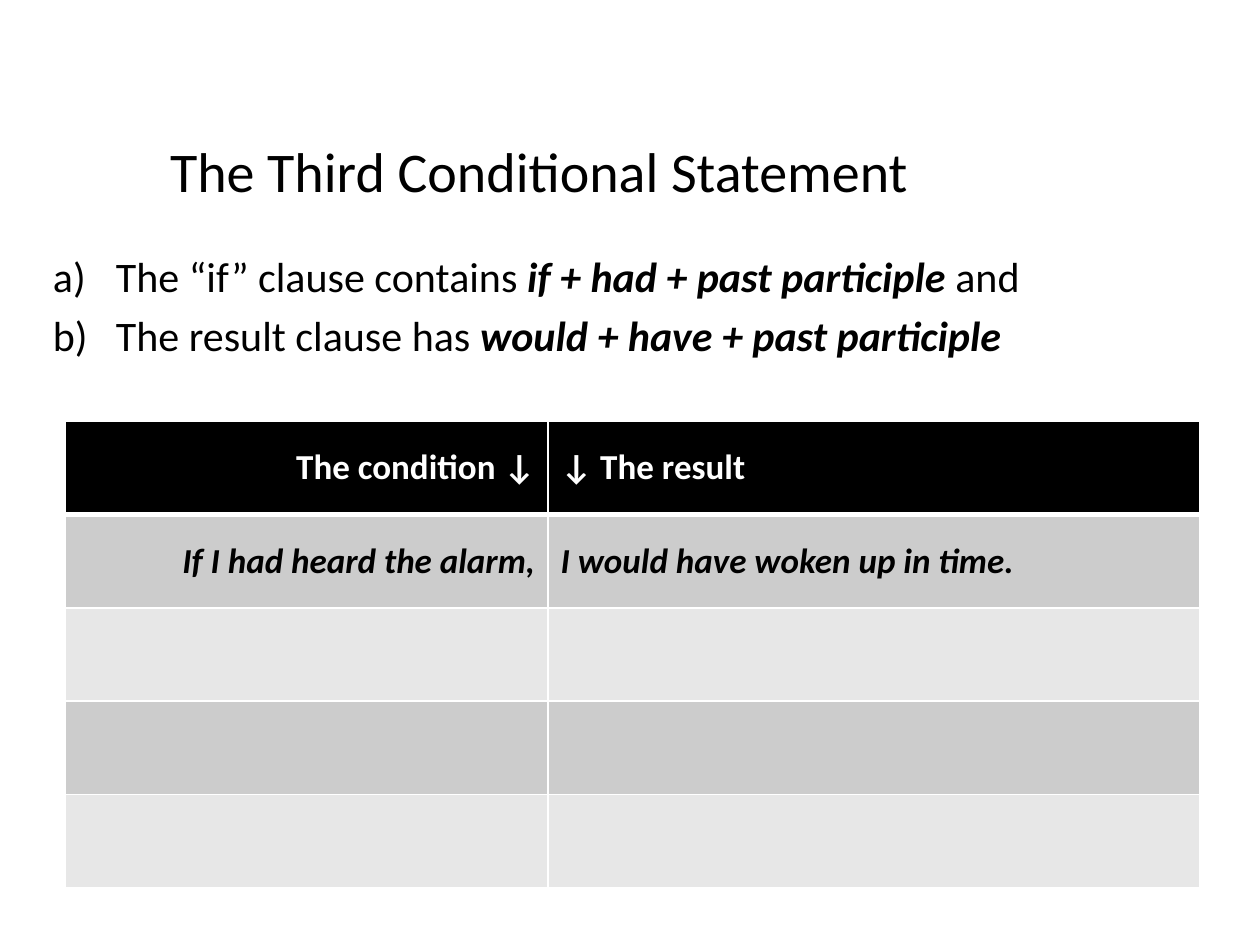
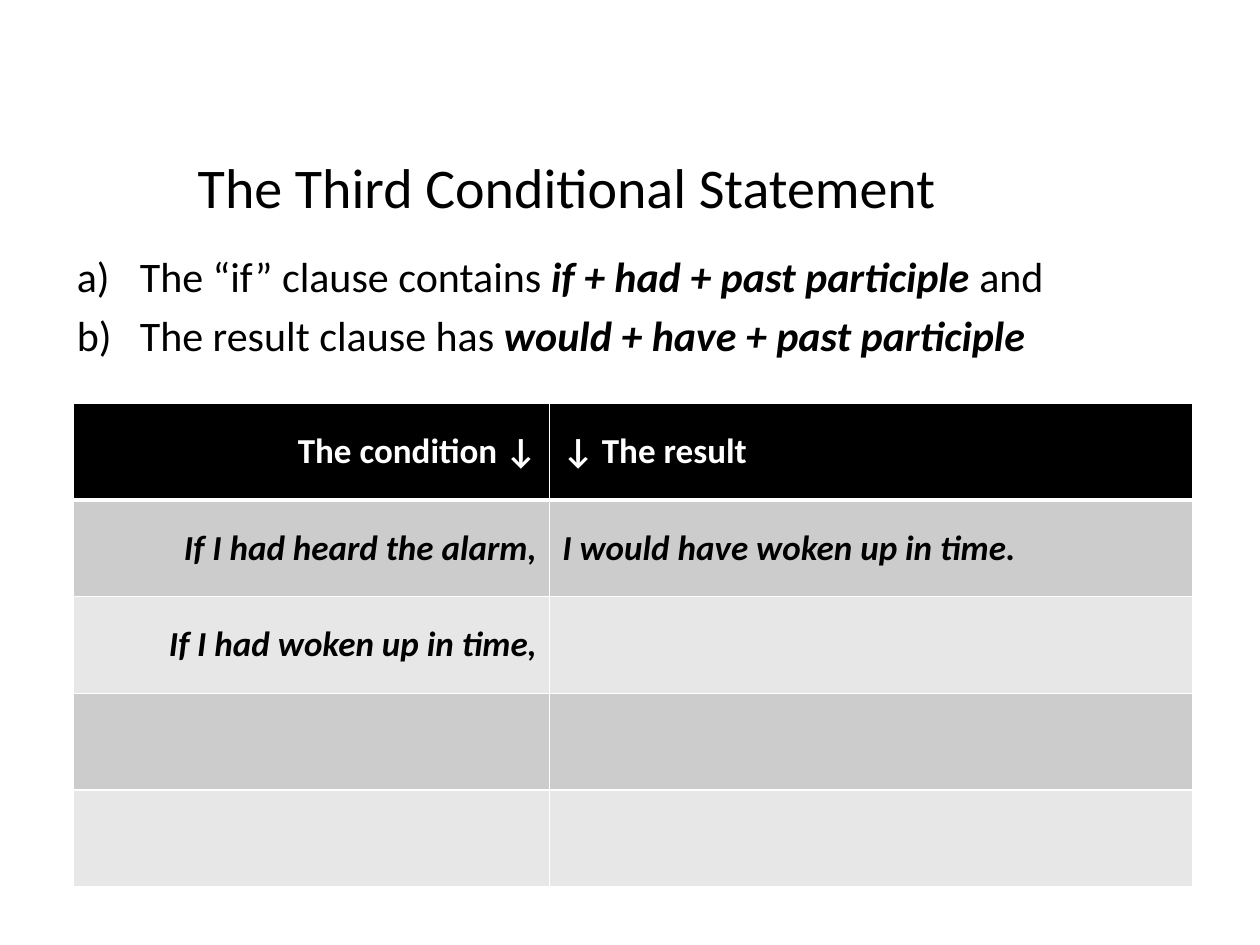
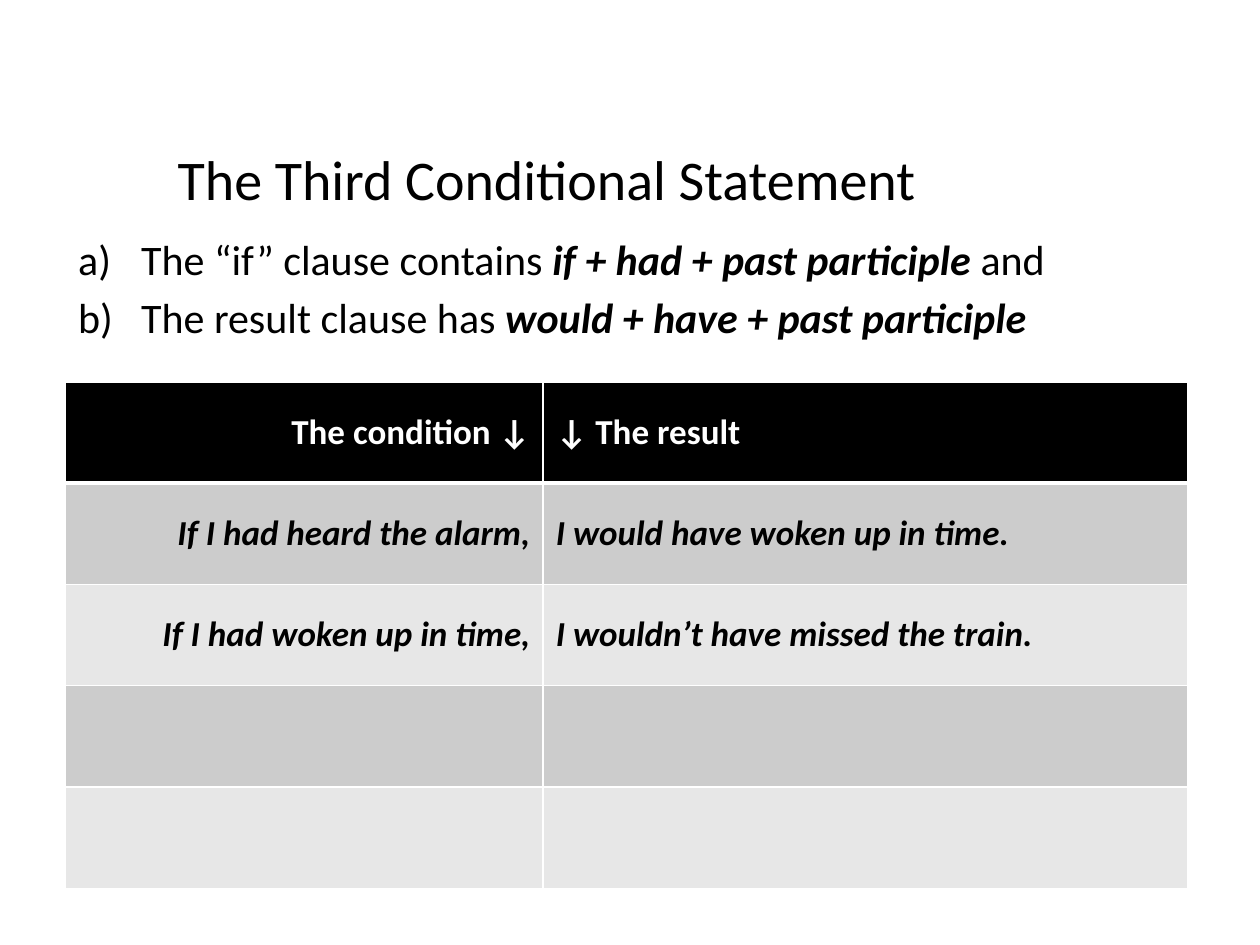
from dataclasses import dataclass

from lxml import etree
from pptx import Presentation
from pptx.dml.color import RGBColor
from pptx.enum import text
from pptx.oxml.ns import qn
from pptx.util import Inches, Pt


@dataclass(frozen=True)
class Theme:
    font: str = "Calibri"
    ink: str = "000000"
    paper: str = "FFFFFF"
    header_fill: str = "000000"
    band_fills: tuple = ("CCCCCC", "E7E7E7")
    title_size: int = 32
    list_size: int = 24
    table_size: int = 20
    border: int = 1
    header_border: int = 3


THEME = Theme()
TITLE = "The Third Conditional Statement"
RULES = [
    [("The “if” clause contains ", False), ("if + had + past participle ", True), ("and", False)],
    [("The result clause has ", False), ("would + have + past participle", True)],
]
HEADER = ("The condition ↓", "↓ The result")
ALARM = ("If I had heard the alarm,", "I would have woken up in time.")
WOKEN = "If I had woken up in time,"
TABLE_ROWS = 5
CONDITION_SHARE = 0.4255

# Boxes are left, top, width, height in inches.
SLIDES = [
    {"title": (-0.22, 1.03, 9, 1.25), "rules": (0.32, 1.94, 9, 6),
     "table": (0.52, 3.34, 9, 3.71), "examples": [ALARM]},
    {"title": (0, 1.16, 9, 0.78), "rules": (0.51, 1.94, 8.92, 6),
     "table": (0.58, 3.2, 8.89, 3.84), "examples": [ALARM, (WOKEN, "")]},
    {"title": (-0.16, 1.1, 9, 1.25), "rules": (0.52, 1.8, 9, 6),
     "table": (0.52, 3.03, 8.91, 4.02),
     "examples": [ALARM, (WOKEN, "I wouldn’t have missed the train.")]},
]


def style_font(font, size, color, bold=False, italic=False):
    font.name = THEME.font
    font.size = Pt(size)
    font.color.rgb = RGBColor.from_string(color)
    font.bold = bold
    font.italic = italic


def place(sp, box):
    """Move a placeholder and let its text run from the top without shrinking."""
    sp.left, sp.top, sp.width, sp.height = map(Inches, box)
    tf = sp.text_frame
    tf.word_wrap = True
    tf.auto_size = text.MSO_AUTO_SIZE.NONE
    tf.vertical_anchor = text.MSO_ANCHOR.TOP
    return tf


def add_title(s, box):
    tf = place(s.shapes.title, box)
    tf.text = TITLE
    p = tf.paragraphs[0]
    p.alignment = text.PP_ALIGN.CENTER
    style_font(p.runs[0].font, THEME.title_size, THEME.ink)


def letter_paragraph(p):
    """Number a paragraph a), b), ... with a hanging indent."""
    pPr = p._p.get_or_add_pPr()
    pPr.set("marL", str(Inches(0.5)))
    pPr.set("indent", str(Inches(-0.5)))
    etree.SubElement(pPr, qn("a:buFont")).set("typeface", "+mj-lt")
    etree.SubElement(pPr, qn("a:buAutoNum")).set("type", "alphaLcParenR")


def add_rules(s, box):
    tf = place(s.placeholders[1], box)
    for i, parts in enumerate(RULES):
        p = tf.add_paragraph() if i else tf.paragraphs[0]
        p.space_before = Pt(0.2 * THEME.list_size if i else 0)
        letter_paragraph(p)
        for words, strong in parts:
            r = p.add_run()
            r.text = words
            style_font(r.font, THEME.list_size, THEME.ink, strong, strong)


def set_borders(cell, bottom):
    tcPr = cell._tc.get_or_add_tcPr()
    for side in "LRTB":
        width = bottom if side == "B" else THEME.border
        ln = etree.SubElement(tcPr, qn(f"a:ln{side}"), w=str(Pt(width)))
        fill = etree.SubElement(ln, qn("a:solidFill"))
        etree.SubElement(fill, qn("a:srgbClr"), val=THEME.paper)


def fill_cell(cell, words, row, column):
    header = row == 0
    set_borders(cell, THEME.header_border if header else THEME.border)
    cell.fill.solid()
    color = THEME.header_fill if header else THEME.band_fills[(row - 1) % 2]
    cell.fill.fore_color.rgb = RGBColor.from_string(color)
    cell.vertical_anchor = text.MSO_ANCHOR.MIDDLE
    if not words:
        return
    cell.text_frame.text = words
    p = cell.text_frame.paragraphs[0]
    p.alignment = text.PP_ALIGN.LEFT if column else text.PP_ALIGN.RIGHT
    style_font(p.runs[0].font, THEME.table_size, THEME.paper if header else THEME.ink,
               bold=True, italic=not header)


def add_examples(s, box, examples):
    left, top, width, height = box
    table = s.shapes.add_table(TABLE_ROWS, 2, *map(Inches, box)).table
    table.columns[0].width = Inches(width * CONDITION_SHARE)
    table.columns[1].width = Inches(width * (1 - CONDITION_SHARE))
    blanks = [("", "")] * (TABLE_ROWS - 1 - len(examples))
    for i, pair in enumerate([HEADER, *examples, *blanks]):
        table.rows[i].height = Inches(height / TABLE_ROWS)
        for j, words in enumerate(pair):
            fill_cell(table.cell(i, j), words, i, j)


def main():
    prs = Presentation()
    prs.slide_width, prs.slide_height = Inches(10), Inches(7.5)
    for content in SLIDES:
        s = prs.slides.add_slide(prs.slide_layouts[1])
        add_title(s, content["title"])
        add_rules(s, content["rules"])
        add_examples(s, content["table"], content["examples"])
    prs.save("out.pptx")


if __name__ == "__main__":
    main()
